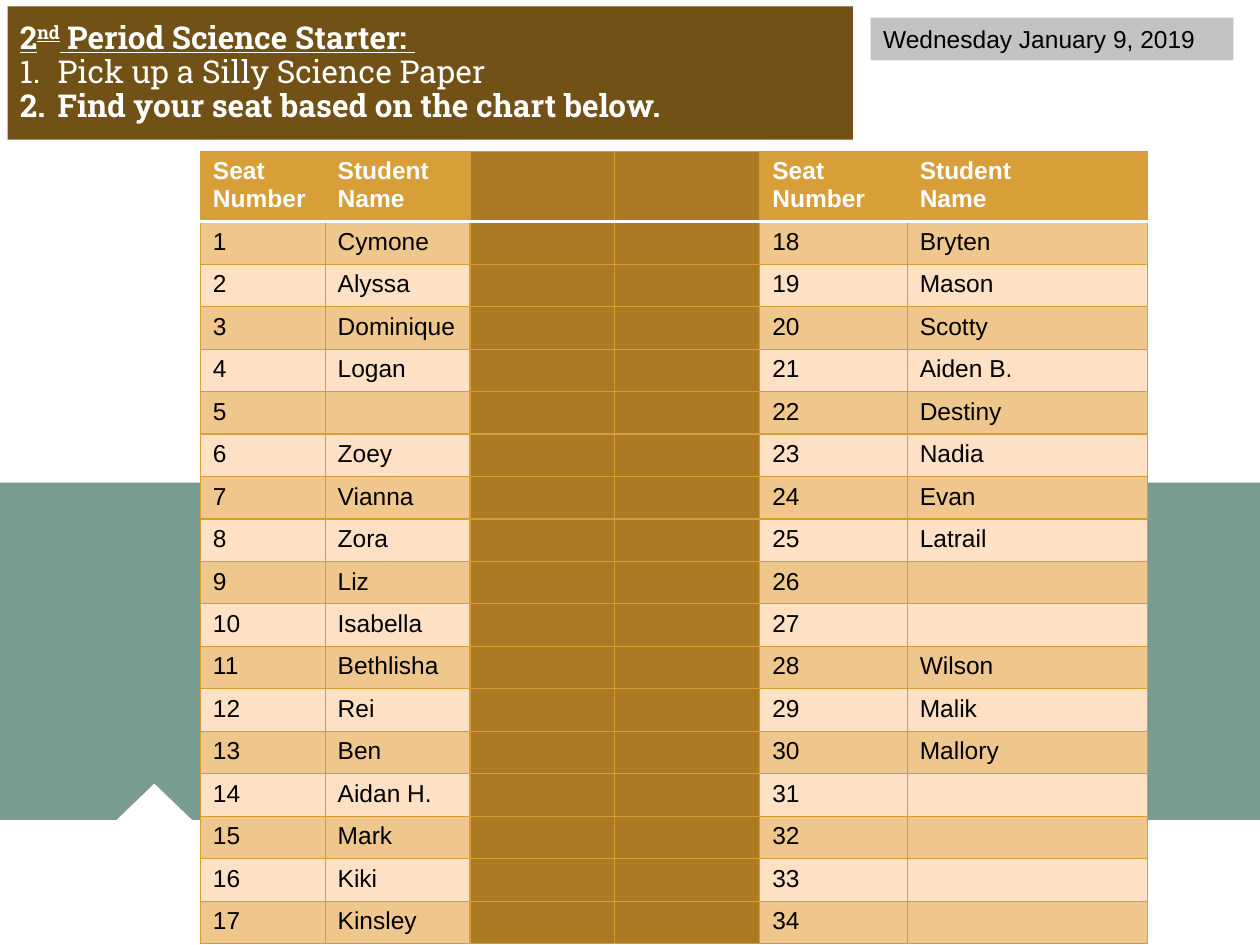
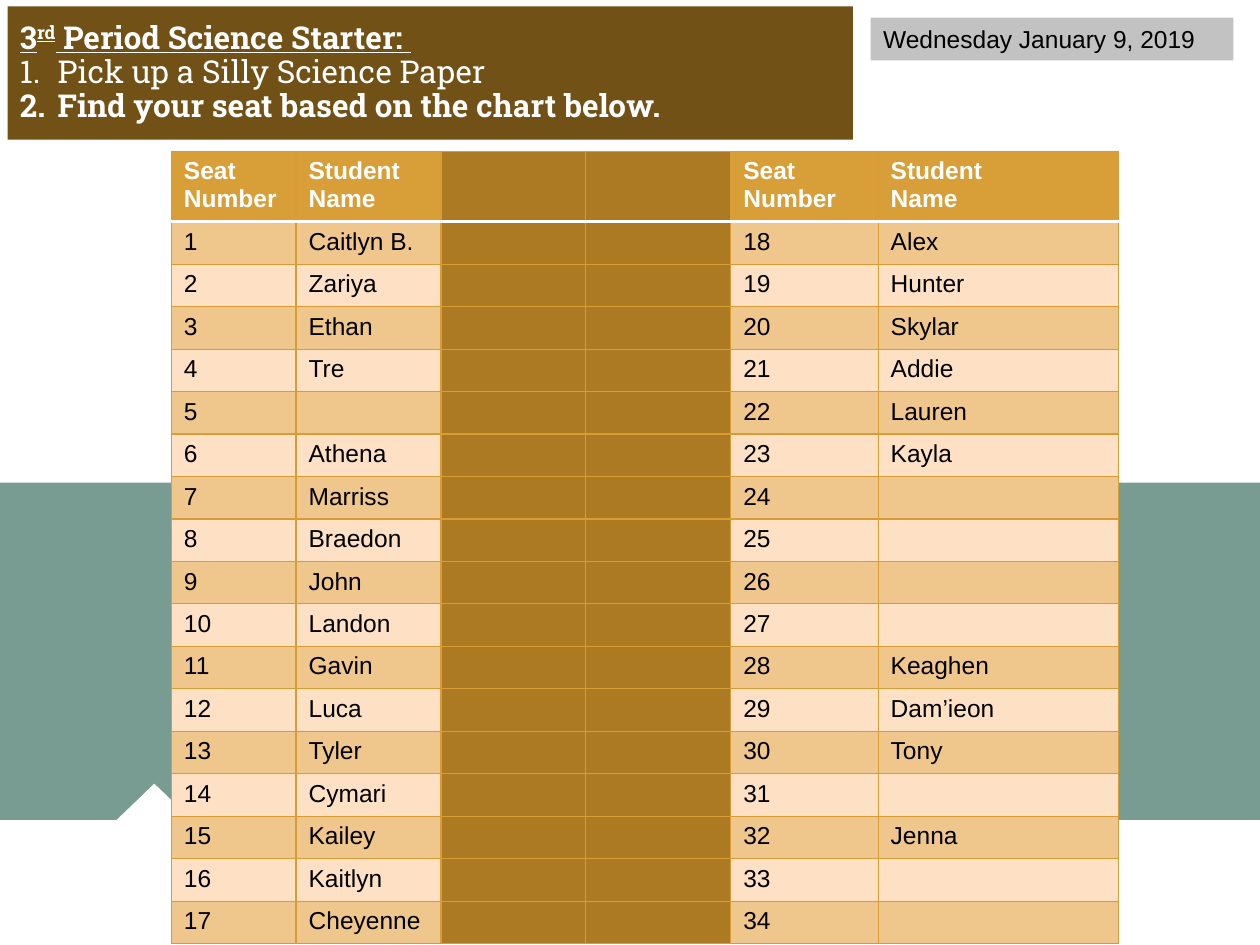
from dataclasses import dataclass

from lxml import etree
from pptx import Presentation
from pptx.dml.color import RGBColor
from pptx.enum.shapes import MSO_SHAPE
from pptx.enum.text import MSO_ANCHOR, PP_ALIGN
from pptx.oxml.ns import qn
from pptx.util import Inches, Pt

RECT, TRIANGLE = MSO_SHAPE.RECTANGLE, MSO_SHAPE.ISOSCELES_TRIANGLE
MIDDLE, LEFT = MSO_ANCHOR.MIDDLE, PP_ALIGN.LEFT


@dataclass(frozen=True)
class Theme:
    """Colours, fonts and type sizes shared by the slides."""
    white: str = "FFFFFF"
    black: str = "000000"
    teal: str = "789C91"
    brown: str = "725116"
    grey: str = "C2C2C2"
    header: str = "D89F39"
    aisle: str = "AB7A22"
    odd_row: str = "EFC68C"
    even_row: str = "FEE1C4"
    grid: str = "D79D34"
    title_font: str = "Roboto Slab"
    body_font: str = "Arial"
    title_size: int = 18
    body_size: int = 14
    grid_width: float = 0.75
    rule_width: float = 2


THEME = Theme()
DATE = "Wednesday January 9, 2019"
STEPS = ["Pick up a Silly Science Paper", "Find your seat based on the chart below."]
HEADINGS = ["Seat Number", "Student\nName", "", "", "Seat\nNumber", "Student\nName"]
COL_WIDTHS = [0.99, 1.15, 1.15, 1.15, 1.17, 1.91]
AISLE_COLS = (2, 3)
SEATS_PER_SIDE = 17
HEADER_HEIGHT = 0.56
TITLE_BOX = (0.06, 0.05, 6.71, 1.06)
DATE_BOX = (6.91, 0.14, 2.88, 0.34)
TABLE_TOP, TABLE_HEIGHT = 1.2, 6.23

PERIODS = [
    ("2", "nd", 1.59,
     ["Cymone", "Alyssa", "Dominique", "Logan", "", "Zoey", "Vianna", "Zora", "Liz",
      "Isabella", "Bethlisha", "Rei", "Ben", "Aidan H.", "Mark", "Kiki", "Kinsley"],
     ["Bryten", "Mason", "Scotty", "Aiden B.", "Destiny", "Nadia", "Evan", "Latrail", "",
      "", "Wilson", "Malik", "Mallory", "", "", "", ""]),
    ("3", "rd", 1.36,
     ["Caitlyn B.", "Zariya", "Ethan", "Tre", "", "Athena", "Marriss", "Braedon", "John",
      "Landon", "Gavin", "Luca", "Tyler", "Cymari", "Kailey", "Kaitlyn", "Cheyenne"],
     ["Alex", "Hunter", "Skylar", "Addie", "Lauren", "Kayla", "", "", "",
      "", "Keaghen", "Dam’ieon", "Tony", "", "Jenna", "", ""]),
]


def rgb(color):
    """Turn a hex string into a colour."""
    return RGBColor.from_string(color)


def add_block(slide, box, color, kind=RECT):
    """Add a plain filled shape without line or shadow."""
    sp = slide.shapes.add_shape(kind, *map(Inches, box))
    sp.shadow.inherit = False
    sp.fill.solid()
    sp.fill.fore_color.rgb = rgb(color)
    sp.line.fill.background()
    return sp


def style_run(r, font, size, color, bold=False, underline=False):
    """Format one run of text."""
    r.font.name = font
    r.font.size = Pt(size)
    r.font.color.rgb = rgb(color)
    r.font.bold = bold
    r.font.underline = underline


def add_backdrop(slide):
    """Draw the teal band, the white floor and its notch."""
    add_block(slide, (0, 3.83, 10, 2.75), THEME.teal)
    add_block(slide, (0, 6.51, 10, 0.99), THEME.white)
    add_block(slide, (0.84, 6.22, 0.77, 0.37), THEME.white, TRIANGLE)


def number_paragraph(p):
    """Give a paragraph an automatic number and a hanging indent."""
    pPr = p._p.get_or_add_pPr()
    pPr.set("marL", str(Inches(0.3)))
    pPr.set("indent", str(-Inches(0.3)))
    etree.SubElement(pPr, qn("a:buFont"), typeface=THEME.title_font)
    etree.SubElement(pPr, qn("a:buAutoNum"), type="arabicPeriod")


def add_starter(slide, box, number, suffix):
    """Add the brown starter panel with its heading and numbered steps."""
    tf = add_block(slide, box, THEME.brown).text_frame
    tf.word_wrap = True
    tf.vertical_anchor = MIDDLE
    tf.margin_left = tf.margin_right = tf.margin_top = tf.margin_bottom = Inches(0.1)
    heading = tf.paragraphs[0]
    for text in (number, suffix, " Period Science Starter: "):
        r = heading.add_run()
        r.text = text
        style_run(r, THEME.title_font, THEME.title_size, THEME.white, True, True)
    heading.runs[1].font._element.set("baseline", "30000")
    for i, step in enumerate(STEPS):
        p = tf.add_paragraph()
        p.text = step
        style_run(p.runs[0], THEME.title_font, THEME.title_size, THEME.white, i == 1)
    for p in tf.paragraphs:
        p.alignment = LEFT
        p.line_spacing = 0.9
    for p in tf.paragraphs[1:]:
        number_paragraph(p)


def add_date(slide, box):
    """Add the grey date label."""
    tf = add_block(slide, box, THEME.grey).text_frame
    tf.word_wrap = True
    tf.text = DATE
    p = tf.paragraphs[0]
    p.alignment = LEFT
    style_run(p.runs[0], THEME.body_font, THEME.body_size, THEME.black)


def set_border(cell, side, color, width):
    """Draw one side of a cell border."""
    ln = etree.SubElement(cell._tc.get_or_add_tcPr(), qn(f"a:ln{side}"), w=str(Pt(width)))
    fill = etree.SubElement(ln, qn("a:solidFill"))
    etree.SubElement(fill, qn("a:srgbClr"), val=color)


def fill_cell(cell, text, row, col):
    """Write and format one cell by its place in the seating chart."""
    is_header = row == 0
    ruled_side = {0: "B", 1: "T"}.get(row)
    for side in "LRTB":
        if side == ruled_side:
            set_border(cell, side, THEME.white, THEME.rule_width)
        else:
            set_border(cell, side, THEME.grid, THEME.grid_width)
    if col in AISLE_COLS:
        color = THEME.aisle
    elif is_header:
        color = THEME.header
    else:
        color = THEME.odd_row if row % 2 else THEME.even_row
    cell.fill.solid()
    cell.fill.fore_color.rgb = rgb(color)
    cell.text_frame.text = text
    for p in cell.text_frame.paragraphs:
        for r in p.runs:
            style_run(r, THEME.body_font, THEME.body_size,
                      THEME.white if is_header else THEME.black, is_header)
        if not p.runs:
            etree.SubElement(p._p, qn("a:endParaRPr"), sz=str(THEME.body_size * 100))


def add_seating_chart(slide, box, left_names, right_names):
    """Add the table of seat numbers and student names."""
    rows = [HEADINGS]
    for seat, (left, right) in enumerate(zip(left_names, right_names), 1):
        rows.append([str(seat), left, "", "", str(seat + SEATS_PER_SIDE), right])
    table = slide.shapes.add_table(len(rows), len(COL_WIDTHS), *map(Inches, box)).table
    for column, width in zip(table.columns, COL_WIDTHS):
        column.width = Inches(width)
    for i, values in enumerate(rows):
        seat_height = (box[3] - HEADER_HEIGHT) / SEATS_PER_SIDE
        table.rows[i].height = Inches(seat_height if i else HEADER_HEIGHT)
        for j, text in enumerate(values):
            fill_cell(table.cell(i, j), text, i, j)


def add_period_slide(prs, number, suffix, table_left, left_names, right_names):
    """Build the seating slide of one class period."""
    slide = prs.slides.add_slide(prs.slide_layouts[6])
    add_backdrop(slide)
    add_starter(slide, TITLE_BOX, number, suffix)
    add_date(slide, DATE_BOX)
    table_box = (table_left, TABLE_TOP, sum(COL_WIDTHS), TABLE_HEIGHT)
    add_seating_chart(slide, table_box, left_names, right_names)


def main():
    """Build and save the presentation."""
    prs = Presentation()
    prs.slide_width, prs.slide_height = Inches(10), Inches(7.5)
    for period in PERIODS:
        add_period_slide(prs, *period)
    prs.save("out.pptx")


if __name__ == "__main__":
    main()
